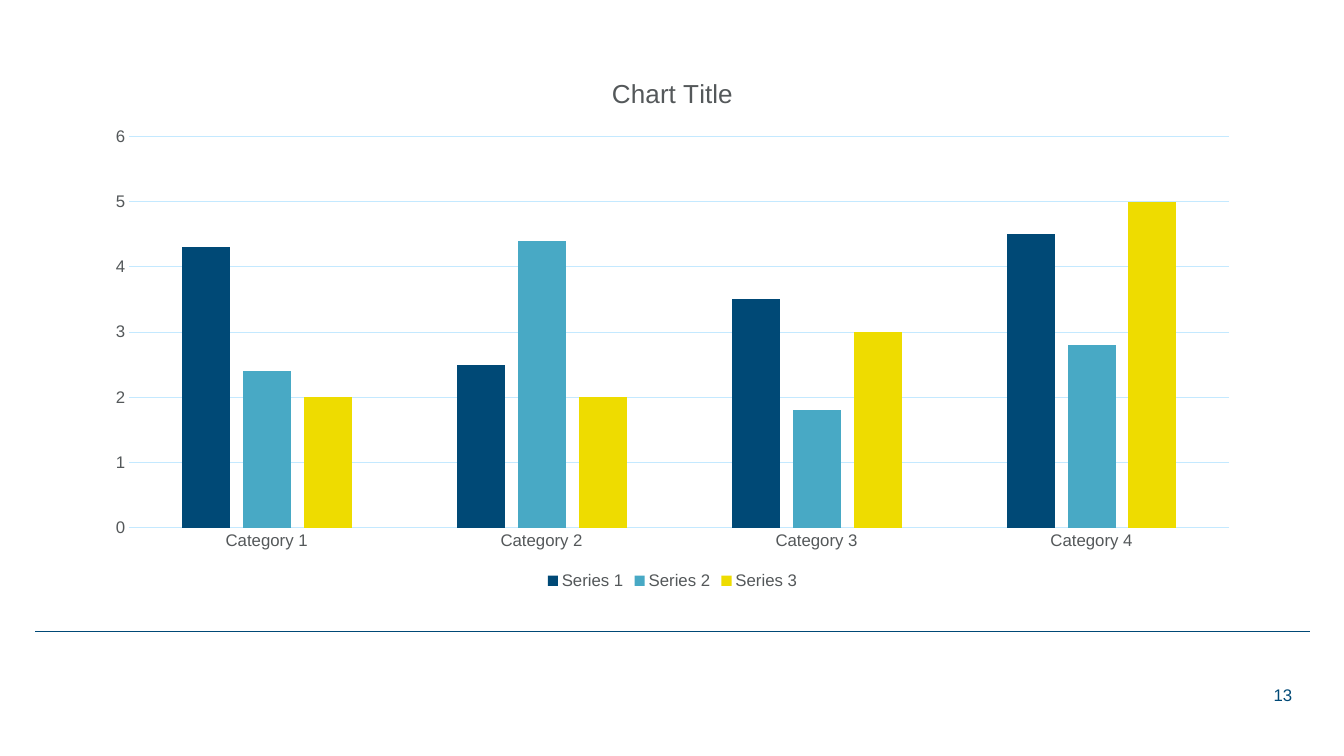
from pptx import Presentation
from pptx.chart.data import CategoryChartData
from pptx.dml.color import RGBColor
from pptx.enum.chart import XL_CHART_TYPE, XL_LEGEND_POSITION, XL_TICK_MARK
from pptx.enum.shapes import MSO_CONNECTOR
from pptx.enum.text import MSO_ANCHOR, PP_ALIGN
from pptx.oxml.ns import qn
from pptx.util import Inches, Pt

COLORS = {
    "navy": "004976",
    "teal": "48A9C5",
    "yellow": "EEDC00",
    "gray": "54585A",
    "pale": "C4E9FF",
}
SERIES = [
    ("Series 1", (4.3, 2.5, 3.5, 4.5), "navy"),
    ("Series 2", (2.4, 4.4, 1.8, 2.8), "teal"),
    ("Series 3", (2, 2, 3, 5), "yellow"),
]


def set_font(font, size, color):
    font.name = "Arial"
    font.size = Pt(size)
    font.bold = False
    font.color.rgb = RGBColor.from_string(COLORS[color])


def set_line(line, color, width):
    line.color.rgb = RGBColor.from_string(COLORS[color])
    line.width = Pt(width)


deck = Presentation()
deck.slide_width = Inches(13.33)
deck.slide_height = Inches(7.5)
page = deck.slides.add_slide(deck.slide_layouts[6])

footer_line = page.shapes.add_connector(
    MSO_CONNECTOR.STRAIGHT, Inches(0.35), Inches(6.26), Inches(12.99), Inches(6.26)
)
set_line(footer_line.line, "navy", 0.5)
properties = footer_line._element.spPr
properties.append(properties.makeelement(qn("a:effectLst"), {}))

number_box = page.shapes.add_textbox(Inches(12.48), Inches(6.66), Inches(0.49), Inches(0.47))
number_frame = number_box.text_frame
number_frame.word_wrap = True
number_frame.vertical_anchor = MSO_ANCHOR.MIDDLE
para = number_frame.paragraphs[0]
para.text = "13"
para.alignment = PP_ALIGN.CENTER
set_font(para.font, 12, "navy")

chart_data = CategoryChartData()
chart_data.categories = [f"Category {number}" for number in range(1, 5)]
for name, values, color in SERIES:
    chart_data.add_series(name, values)
chart = page.shapes.add_chart(
    XL_CHART_TYPE.COLUMN_CLUSTERED,
    Inches(0.92), Inches(0.55), Inches(11.5), Inches(5.34),
    chart_data,
).chart
set_font(chart.font, 10, "navy")

chart.has_title = True
title = chart.chart_title.text_frame.paragraphs[0]
title.text = "Chart Title"
set_font(title.font, 18.6, "gray")
chart.chart_title.include_in_layout = False

chart.has_legend = True
chart.legend.position = XL_LEGEND_POSITION.BOTTOM
chart.legend.include_in_layout = False
set_font(chart.legend.font, 12, "gray")

for axis in (chart.category_axis, chart.value_axis):
    axis.major_tick_mark = XL_TICK_MARK.NONE
    axis.minor_tick_mark = XL_TICK_MARK.NONE
    set_font(axis.tick_labels.font, 12, "gray")

set_line(chart.category_axis.format.line, "pale", 0.75)
value_axis = chart.value_axis
value_axis.minimum_scale = 0
value_axis.maximum_scale = 6
value_axis.major_unit = 1
value_axis.format.line.fill.background()
set_line(value_axis.major_gridlines.format.line, "pale", 0.75)

plot = chart.plots[0]
plot.vary_by_categories = False
plot.gap_width = 219
plot.overlap = -27
for series, (name, values, color) in zip(plot.series, SERIES):
    series.format.fill.solid()
    series.format.fill.fore_color.rgb = RGBColor.from_string(COLORS[color])

deck.save("out.pptx")
